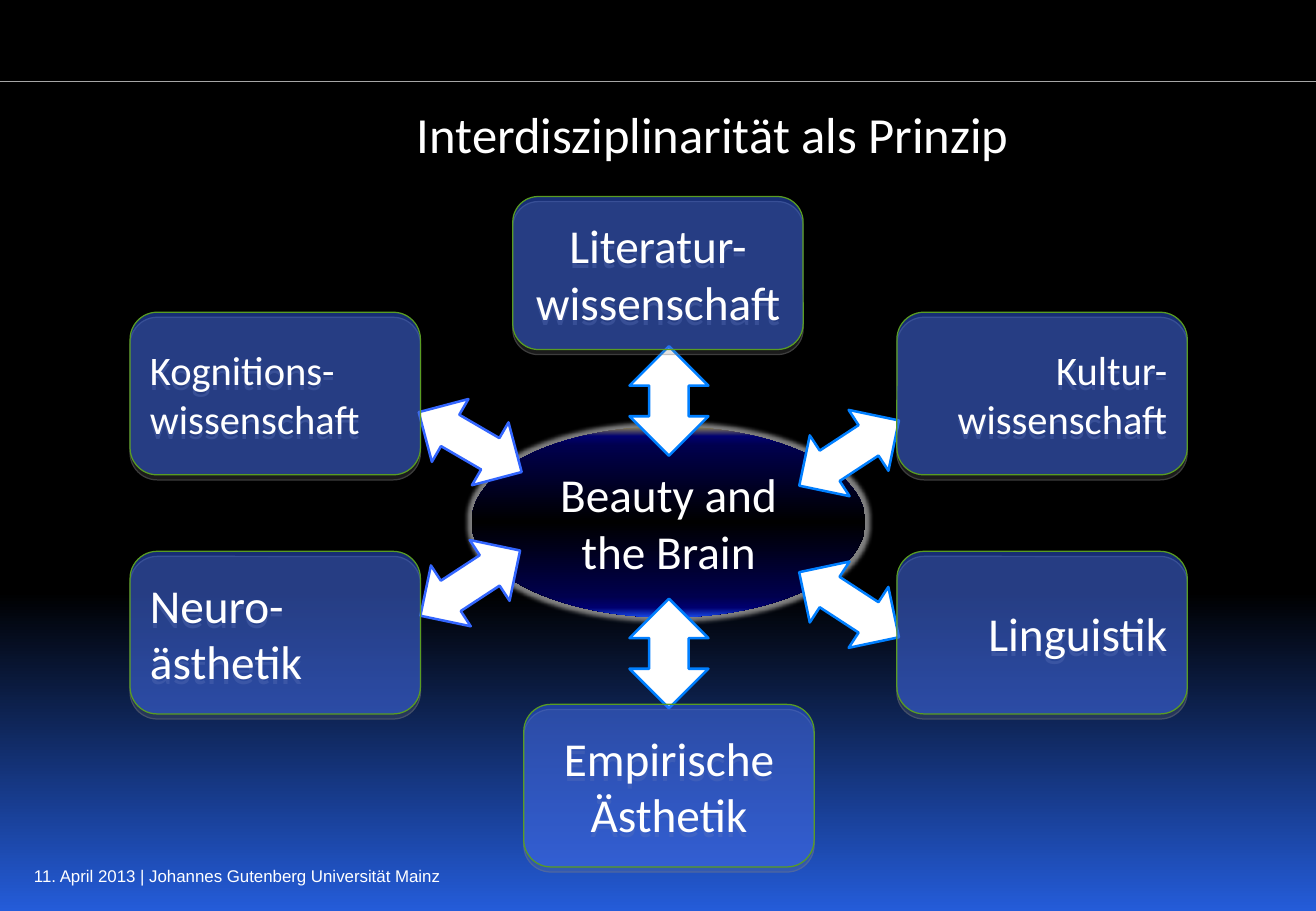
import lxml.etree
import pptx
import pptx.dml.color
import pptx.enum.shapes
import pptx.enum.text
import pptx.oxml
import pptx.oxml.ns
import pptx.util

Cm = pptx.util.Cm
Pt = pptx.util.Pt
RGBColor = pptx.dml.color.RGBColor
SHAPE = pptx.enum.shapes.MSO_SHAPE
ALIGN = pptx.enum.text.PP_ALIGN
ANCHOR = pptx.enum.text.MSO_ANCHOR
qn = pptx.oxml.ns.qn

WHITE = RGBColor(0xFF, 0xFF, 0xFF)
BLACK = RGBColor(0x00, 0x00, 0x00)
RULE_GREY = RGBColor(0xA6, 0xA6, 0xA6)
SHADOW_GREY = RGBColor(0x80, 0x80, 0x80)
BOX_BLUE = RGBColor(0x33, 0x66, 0xFF)
BOX_GREEN = RGBColor(0x59, 0x9C, 0x22)
ARROW_BLUE = RGBColor(0x00, 0x7F, 0xFF)
SKY_BLUE = RGBColor(0x24, 0x5C, 0xD9)
SAND = RGBColor(0x94, 0x8A, 0x54)
NAVY = RGBColor(0x00, 0x00, 0x6F)
DARK_NAVY = RGBColor(0x00, 0x00, 0x4D)
RIM_BLUE = RGBColor(0x19, 0x4A, 0xEA)


def fill_downwards(fill, element, stops):
    """Fill with a gradient that runs from top to bottom."""
    fill.gradient()
    fill.gradient_angle = 270
    stop_list = element.find(".//" + qn("a:gsLst"))
    for old_stop in list(stop_list):
        stop_list.remove(old_stop)
    for percent, color in stops:
        stop = lxml.etree.SubElement(stop_list, qn("a:gs"), pos=str(percent * 1000))
        lxml.etree.SubElement(stop, qn("a:srgbClr"), val=str(color))


def write(shape, text, size, align, anchor=ANCHOR.MIDDLE, font="Calibri"):
    """Put one white paragraph into a shape."""
    frame = shape.text_frame
    frame.word_wrap = True
    frame.auto_size = pptx.enum.text.MSO_AUTO_SIZE.NONE
    frame.vertical_anchor = anchor
    paragraph = frame.paragraphs[0]
    paragraph.alignment = align
    paragraph.space_before = Pt(0)
    run = paragraph.add_run()
    run.text = text
    run.font.size = Pt(size)
    run.font.name = font
    run.font.color.rgb = WHITE


presentation = pptx.Presentation()
presentation.slide_width = Cm(27.51)
presentation.slide_height = Cm(19.05)
slide = presentation.slides.add_slide(presentation.slide_layouts[5])

# Background
fill_downwards(slide.background.fill, slide.element,
               [(0, BLACK), (65, BLACK), (100, SKY_BLUE)])

# Header rule
rule = slide.shapes.add_connector(
    pptx.enum.shapes.MSO_CONNECTOR.STRAIGHT, 0, Cm(1.7), presentation.slide_width, Cm(1.7))
rule.line.color.rgb = RULE_GREY
rule.line.width = Pt(0.75)
lxml.etree.SubElement(rule.element.spPr, qn("a:effectLst"))

# Title and footer
title = slide.shapes.title
title.left, title.top, title.width, title.height = Cm(2.51), Cm(2.03), Cm(24.79), Cm(1.8)
write(title, "Interdisziplinarität als Prinzip", 30, ALIGN.CENTER, ANCHOR.TOP)

footer = slide.shapes.add_textbox(Cm(0.46), Cm(17.98), Cm(13.08), Cm(0.84))
write(footer, "11. April 2013 | Johannes Gutenberg Universität Mainz", 10,
      ALIGN.LEFT, ANCHOR.TOP, "Arial")

# Central ellipse with a grey glow
center = slide.shapes.add_shape(SHAPE.OVAL, Cm(9.86), Cm(8.92), Cm(8.23), Cm(3.99))
fill_downwards(center.fill, center.element, [
    (0, SAND), (5, NAVY), (10, DARK_NAVY), (50, BLACK),
    (89, DARK_NAVY), (95, NAVY), (100, RIM_BLUE)])
center.line.fill.background()
center.shadow.inherit = False
effects = center.element.spPr.find(qn("a:effectLst"))
glow = lxml.etree.SubElement(effects, qn("a:glow"), rad=str(Pt(5)))
lxml.etree.SubElement(glow, qn("a:srgbClr"), val=str(SHADOW_GREY))
write(center, "Beauty and the Brain", 28, ALIGN.CENTER)

# Double arrows: left, top, width, height, rotation, outline
UPRIGHT = (1.65, 2.29)
SLANTED = (1.52, 2.49)
arrows = [
    (13.16, 7.24, UPRIGHT, 0, ARROW_BLUE),
    (13.16, 12.52, UPRIGHT, 0, ARROW_BLUE),
    (16.99, 8.23, SLANTED, 56.8, ARROW_BLUE),
    (9.07, 10.95, SLANTED, 56.8, BOX_BLUE),
    (16.99, 11.4, SLANTED, 303.1, ARROW_BLUE),
    (9.07, 8.0, SLANTED, 300.2, BOX_BLUE),
]
for left, top, (width, height), rotation, outline in arrows:
    arrow = slide.shapes.add_shape(
        SHAPE.UP_DOWN_ARROW, Cm(left), Cm(top), Cm(width), Cm(height))
    arrow.rotation = rotation
    arrow.shadow.inherit = False
    arrow.fill.solid()
    arrow.fill.fore_color.rgb = WHITE
    arrow.line.color.rgb = outline
    arrow.line.width = Pt(1.5)

# Discipline boxes: text, left, top, height, text size, alignment
LEFT_COLUMN, RIGHT_COLUMN = 2.72, 18.75
UPPER_ROW, LOWER_ROW = 6.53, 11.53
disciplines = [
    ("Empirische Ästhetik", 10.95, 14.73, 3.4, 28, ALIGN.CENTER),
    ("Neuro-ästhetik", LEFT_COLUMN, LOWER_ROW, 3.4, 28, ALIGN.LEFT),
    ("Literatur-wissenschaft", 10.72, 4.11, 3.2, 28, ALIGN.CENTER),
    ("Kognitions-wissenschaft", LEFT_COLUMN, UPPER_ROW, 3.4, 24, ALIGN.LEFT),
    ("Kultur-wissenschaft", RIGHT_COLUMN, UPPER_ROW, 3.4, 24, ALIGN.RIGHT),
    ("Linguistik", RIGHT_COLUMN, LOWER_ROW, 3.4, 28, ALIGN.RIGHT),
]
for text, left, top, height, size, align in disciplines:
    box = slide.shapes.add_shape(
        SHAPE.ROUNDED_RECTANGLE, Cm(left), Cm(top), Cm(6.07), Cm(height))
    box.adjustments[0] = 0.167
    box.fill.solid()
    box.fill.fore_color.rgb = BOX_BLUE
    fill_color = box.element.spPr.find(qn("a:solidFill")).find(qn("a:srgbClr"))
    lxml.etree.SubElement(fill_color, qn("a:alpha"), val="46000")
    box.line.color.rgb = BOX_GREEN
    box.line.width = Pt(0.75)
    # Hard shadow straight below the box
    box.shadow.inherit = False
    effects = box.element.spPr.find(qn("a:effectLst"))
    shadow = lxml.etree.SubElement(effects, qn("a:outerShdw"), blurRad="0",
                                   dist=str(Pt(3)), dir="5400000", rotWithShape="0")
    shadow_color = lxml.etree.SubElement(shadow, qn("a:srgbClr"), val=str(SHADOW_GREY))
    lxml.etree.SubElement(shadow_color, qn("a:alpha"), val="48000")
    write(box, text, size, align)

presentation.save("out.pptx")
